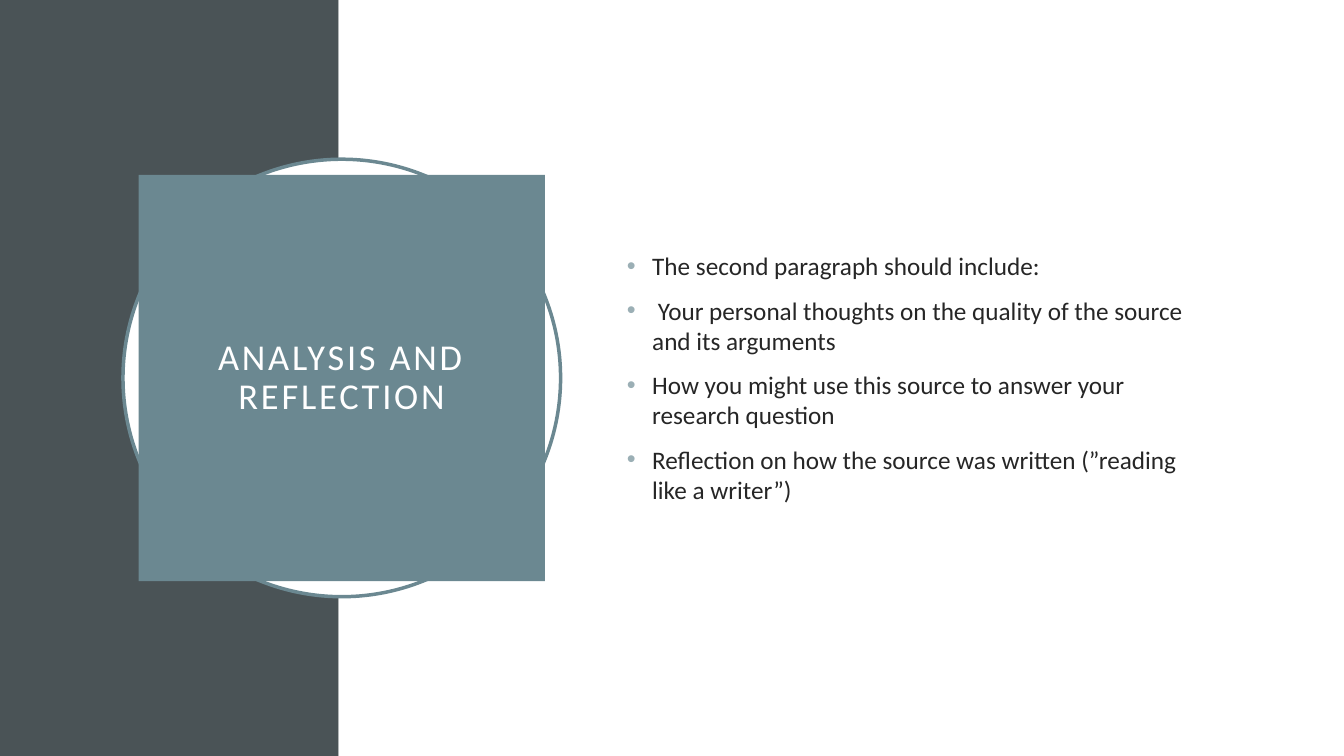
from pptx import Presentation
from pptx.dml.color import RGBColor
from pptx.enum.shapes import MSO_SHAPE as Shape
from pptx.enum.text import MSO_ANCHOR as Anchor, PP_ALIGN as Align
from pptx.oxml.ns import qn
from pptx.util import Inches, Pt
from lxml import etree

TITLE = "ANALYSIS AND REFLECTION"
POINTS = [
    "The second paragraph should include:",
    " Your personal thoughts on the quality of the source and its arguments",
    "How you might use this source to answer your research question",
    "Reflection on how the source was written (”reading like a writer”)",
]

FONT = "Calibri"
WHITE = RGBColor(0xFF, 0xFF, 0xFF)
SLATE = RGBColor(0x4A, 0x53, 0x56)
TEAL = RGBColor(0x6B, 0x88, 0x91)
INK = RGBColor(0x26, 0x26, 0x26)
BULLET = RGBColor(0x9B, 0xAF, 0xB5)

SLIDE_WIDTH, SLIDE_HEIGHT = 13.33, 7.5
BAND_WIDTH = 3.36
CENTER_X, CENTER_Y = 3.39, 3.75
RING_SIZE, TITLE_SIZE = 4.34, 4.03


def add_panel(slide, kind, left, top, width, height, fill, line=None):
    panel = slide.shapes.add_shape(
        kind, Inches(left), Inches(top), Inches(width), Inches(height))
    panel.shadow.inherit = False
    panel.fill.solid()
    panel.fill.fore_color.rgb = fill
    if line is None:
        panel.line.fill.background()
    else:
        panel.line.color.rgb = line
        panel.line.width = Pt(2.5)
    return panel


def add_centered(slide, kind, size, fill, line=None):
    """Add a square-sided shape around the title's center."""
    return add_panel(slide, kind, CENTER_X - size / 2, CENTER_Y - size / 2,
                     size, size, fill, line)


def add_bullet(para):
    props = para._p.get_or_add_pPr()
    props.set("marL", str(Inches(0.25)))
    props.set("indent", str(-Inches(0.25)))
    color = etree.SubElement(props, qn("a:buClr"))
    etree.SubElement(color, qn("a:srgbClr"), val=str(BULLET))
    etree.SubElement(props, qn("a:buFont"), typeface="Arial")
    etree.SubElement(props, qn("a:buChar"), char="•")


def write(box, lines, size, color, align=Align.LEFT, line_spacing=None,
          before=0, tracking=0, inset=None, bullets=False):
    frame = box.text_frame
    frame.word_wrap = True
    frame.vertical_anchor = Anchor.MIDDLE
    if inset is not None:
        frame.margin_left = frame.margin_right = Inches(inset)
        frame.margin_top = frame.margin_bottom = Inches(inset)
    for index, line in enumerate(lines):
        para = frame.add_paragraph() if index else frame.paragraphs[0]
        para.alignment = align
        para.line_spacing = line_spacing
        para.space_before = Pt(before)
        if bullets:
            add_bullet(para)
        span = para.add_run()
        span.text = line
        span.font.name = FONT
        span.font.size = Pt(size)
        span.font.color.rgb = color
        if tracking:
            span.font._element.set("spc", str(tracking * 100))


def main():
    deck = Presentation()
    deck.slide_width = Inches(SLIDE_WIDTH)
    deck.slide_height = Inches(SLIDE_HEIGHT)
    slide = deck.slides.add_slide(deck.slide_layouts[6])

    add_panel(slide, Shape.RECTANGLE, 0, 0, BAND_WIDTH, SLIDE_HEIGHT, SLATE)
    add_panel(slide, Shape.RECTANGLE, BAND_WIDTH, 0,
              SLIDE_WIDTH - BAND_WIDTH, SLIDE_HEIGHT, WHITE)
    add_centered(slide, Shape.OVAL, RING_SIZE, WHITE, TEAL)

    title = add_centered(slide, Shape.RECTANGLE, TITLE_SIZE, TEAL)
    write(title, [TITLE], 26, WHITE, align=Align.CENTER, line_spacing=0.9,
          tracking=2, inset=0.2)

    body = slide.shapes.add_textbox(
        Inches(6.12), Inches(1.53), Inches(5.82), Inches(4.43))
    write(body, POINTS, 18, INK, before=10, bullets=True)

    deck.save("out.pptx")


if __name__ == "__main__":
    main()
